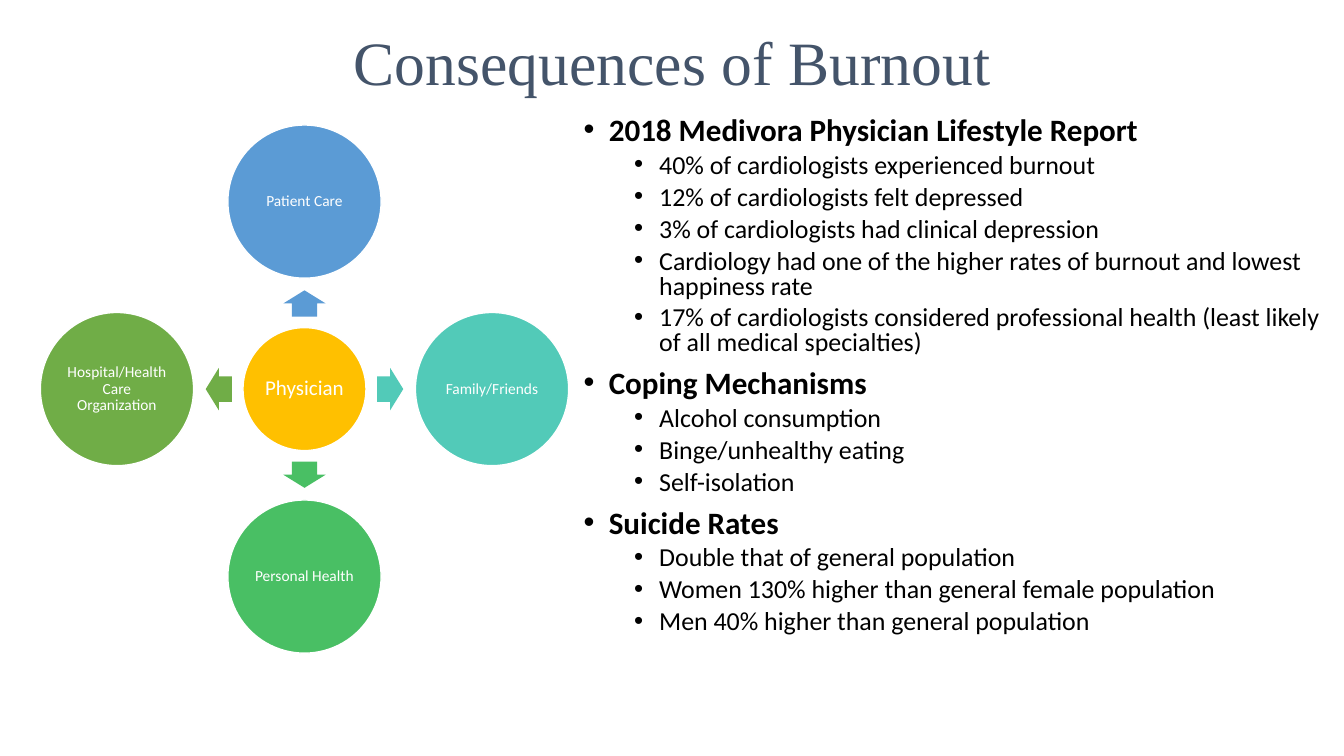
from lxml import etree
from pptx import Presentation
from pptx.dml.color import RGBColor
from pptx.enum.shapes import MSO_SHAPE
from pptx.enum.text import MSO_ANCHOR, PP_ALIGN
from pptx.oxml.ns import qn
from pptx.util import Inches, Pt

OVAL = MSO_SHAPE.OVAL
RIGHT_ARROW = MSO_SHAPE.RIGHT_ARROW
MIDDLE = MSO_ANCHOR.MIDDLE
TOP = MSO_ANCHOR.TOP
CENTER = PP_ALIGN.CENTER

HUB_X, HUB_Y = 3.02, 3.86
SPOKE_DISTANCE, ARROW_DISTANCE = 1.86, 0.85
HUB_SIZE, SPOKE_SIZE = 1.22, 1.52

SPOKES = [
    ("Patient Care", "5B9BD5", 0, -1, 270),
    ("Family/Friends", "52CAB8", 1, 0, 0),
    ("Personal Health", "49BF64", 0, 1, 90),
    ("Hospital/Health Care Organization", "70AD47", -1, 0, 180),
]

SECTIONS = {
    "2018 Medivora Physician Lifestyle Report": [
        "40% of cardiologists experienced burnout",
        "12% of cardiologists felt depressed",
        "3% of cardiologists had clinical depression",
        "Cardiology had one of the higher rates of burnout and lowest happiness rate",
        "17% of cardiologists considered professional health (least likely of all medical specialties)",
    ],
    "Coping Mechanisms": [
        "Alcohol consumption",
        "Binge/unhealthy eating",
        "Self-isolation",
    ],
    "Suicide Rates": [
        "Double that of general population",
        "Women 130% higher than general female population",
        "Men 40% higher than general population",
    ],
}


def color(value):
    return RGBColor.from_string(value)


def apply(target, values):
    for name, value in values.items():
        setattr(target, name, value)


class SlideBuilder:
    body_font = "Calibri"
    title_font = "Times New Roman"
    levels = [
        {"size": 22.2, "bold": True, "indent": 0.25, "before": 10},
        {"size": 18.5, "bold": False, "indent": 0.75, "before": 5},
    ]

    def __init__(self, slide):
        self.slide = slide

    def add_text(self, paragraph, text, size, font, hue, bold=False):
        run = paragraph.add_run()
        run.text = text
        apply(run.font, {"size": Pt(size), "name": font, "bold": bold})
        run.font.color.rgb = color(hue)

    def text_box(self, left, top, width, height, anchor):
        box = self.slide.shapes.add_textbox(
            Inches(left), Inches(top), Inches(width), Inches(height))
        apply(box.text_frame, {"word_wrap": True, "vertical_anchor": anchor})
        return box.text_frame

    def title(self, text):
        paragraph = self.text_box(0.67, 0.02, 12, 1.25, MIDDLE).paragraphs[0]
        apply(paragraph, {"alignment": CENTER, "line_spacing": 0.9})
        self.add_text(paragraph, text, 44, self.title_font, "44546A")

    def shape(self, kind, center_x, center_y, width, height, fill):
        shape = self.slide.shapes.add_shape(
            kind, Inches(center_x - width / 2), Inches(center_y - height / 2),
            Inches(width), Inches(height))
        shape.shadow.inherit = False
        shape.fill.solid()
        shape.fill.fore_color.rgb = color(fill)
        return shape

    def circle(self, text, center_x, center_y, diameter, fill, size):
        circle = self.shape(OVAL, center_x, center_y, diameter, diameter, fill)
        circle.line.color.rgb = color("FFFFFF")
        circle.line.width = Pt(1)
        frame = circle.text_frame
        apply(frame, {"word_wrap": True, "vertical_anchor": MIDDLE})
        for side in ("left", "top", "right", "bottom"):
            setattr(frame, f"margin_{side}", Inches(0.02))
        paragraph = frame.paragraphs[0]
        apply(paragraph, {"alignment": CENTER, "line_spacing": 0.9})
        self.add_text(paragraph, text, size, self.body_font, "FFFFFF")

    def arrow(self, center_x, center_y, rotation, fill):
        arrow = self.shape(RIGHT_ARROW, center_x, center_y, 0.26, 0.42, fill)
        arrow.line.fill.background()
        arrow.rotation = rotation
        arrow.adjustments[0] = 0.6
        arrow.adjustments[1] = 0.5

    def bullet(self, paragraph, text, level, first):
        style = self.levels[level]
        properties = paragraph._p.get_or_add_pPr()
        properties.set("marL", str(Inches(style["indent"])))
        properties.set("indent", str(-Inches(0.25)))
        etree.SubElement(properties, qn("a:buFont")).set("typeface", "Arial")
        etree.SubElement(properties, qn("a:buChar")).set("char", "•")
        apply(paragraph, {
            "level": level,
            "line_spacing": 0.8,
            "space_before": Pt(0 if first else style["before"]),
        })
        self.add_text(paragraph, text, style["size"], self.body_font, "000000", style["bold"])

    def outline(self, sections):
        frame = self.text_box(5.69, 1.12, 7.64, 5.47, TOP)
        entries = [
            entry
            for heading, points in sections.items()
            for entry in [(heading, 0), *((point, 1) for point in points)]
        ]
        for index, (text, level) in enumerate(entries):
            paragraph = frame.add_paragraph() if index else frame.paragraphs[0]
            self.bullet(paragraph, text, level, index == 0)


def main():
    presentation = Presentation()
    apply(presentation, {"slide_width": Inches(13.33), "slide_height": Inches(7.5)})
    builder = SlideBuilder(presentation.slides.add_slide(presentation.slide_layouts[6]))
    builder.title("Consequences of Burnout")
    builder.outline(SECTIONS)
    builder.circle("Physician", HUB_X, HUB_Y, HUB_SIZE, "FFC000", 15)
    for text, fill, step_x, step_y, rotation in SPOKES:
        builder.arrow(HUB_X + step_x * ARROW_DISTANCE,
                      HUB_Y + step_y * ARROW_DISTANCE, rotation, fill)
        builder.circle(text, HUB_X + step_x * SPOKE_DISTANCE,
                       HUB_Y + step_y * SPOKE_DISTANCE, SPOKE_SIZE, fill, 11)
    presentation.save("out.pptx")


if __name__ == "__main__":
    main()
